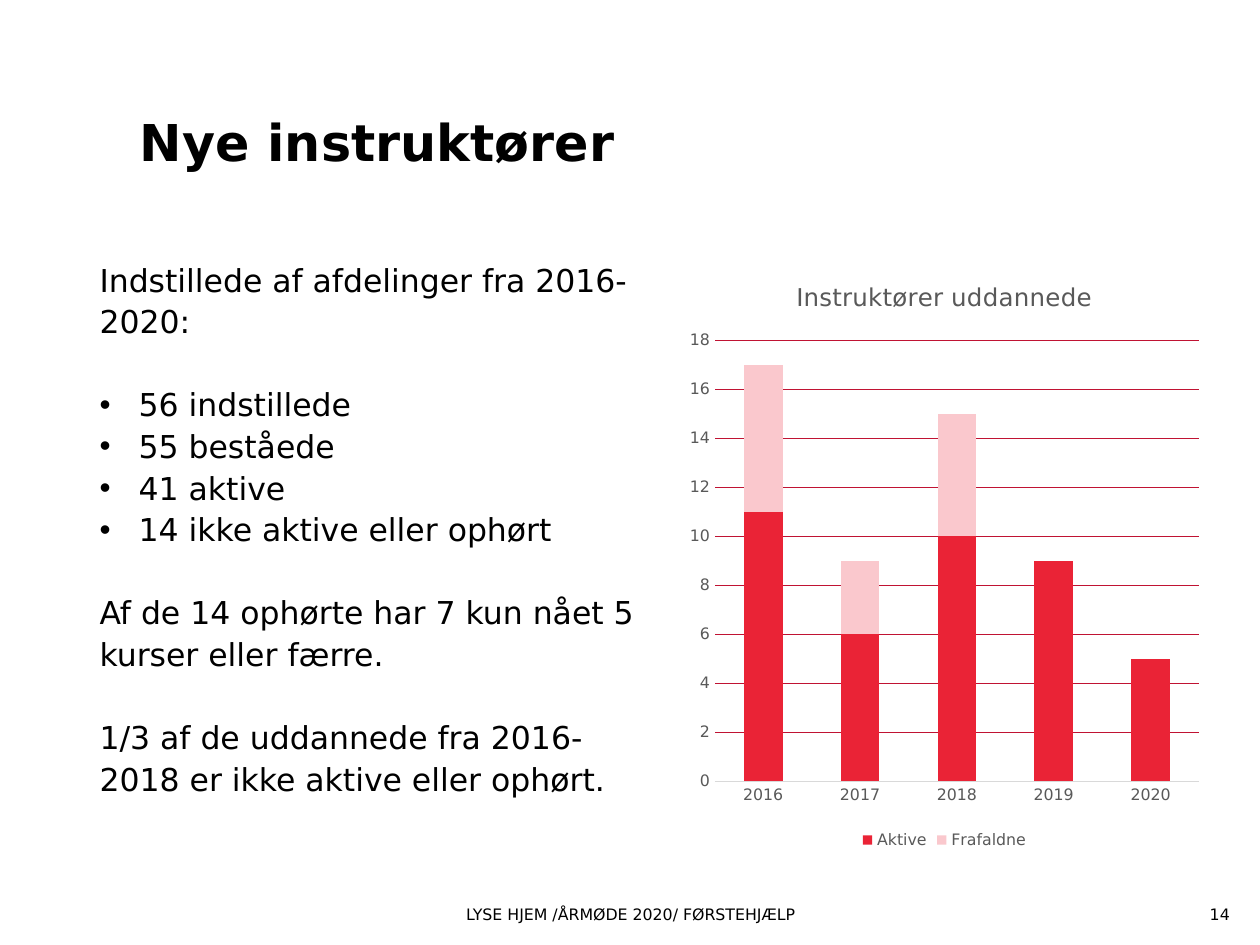
from pptx import Presentation
from pptx.chart.data import CategoryChartData
from pptx.dml.color import RGBColor
from pptx.enum.chart import XL_CHART_TYPE, XL_LEGEND_POSITION, XL_TICK_MARK
from pptx.enum.text import MSO_ANCHOR, PP_ALIGN
from pptx.oxml import parse_xml
from pptx.oxml.ns import nsdecls
from pptx.util import Inches, Pt

WIDTH, HEIGHT = 10, 7.5
BLACK, GREY, PALE_GREY = "000000", "595959", "D9D9D9"
RED, PINK, CRIMSON = "EA2336", "FAC8CD", "C01333"

# Shares of the slide's width and height
LEFT, COLUMN = 0.079, 0.441
CONTENT_TOP, CONTENT_HEIGHT = 0.272, 0.632
FOOTER_TOP, FOOTER_HEIGHT = 0.951, 0.033

YEARS = ["2016", "2017", "2018", "2019", "2020"]
INSTRUCTORS = {"Aktive": ([11, 6, 10, 9, 5], RED), "Frafaldne": ([6, 3, 5, 0, 0], PINK)}

# Blocks of text: (lines, bulleted)
BODY = [
    (["Indstillede af afdelinger fra 2016-2020:"], False),
    (["56 indstillede", "55 beståede", "41 aktive", "14 ikke aktive eller ophørt"], True),
    (["Af de 14 ophørte har 7 kun nået 5 kurser eller færre."], False),
    (["1/3 af de uddannede fra 2016-2018 er ikke aktive eller ophørt."], False),
]


def color(value):
    return RGBColor.from_string(value)


class Page:
    font_name = "DejaVu Sans"
    block_gap = 23.75

    def __init__(self, deck):
        self.slide = deck.slides.add_slide(deck.slide_layouts[6])

    def area(self, left, top, width, height):
        """Turn shares of the slide into lengths."""
        return (Inches(left * WIDTH), Inches(top * HEIGHT),
                Inches(width * WIDTH), Inches(height * HEIGHT))

    def style(self, font, size, fill=BLACK, bold=False):
        font.name, font.size, font.bold = self.font_name, Pt(size), bold
        font.color.rgb = color(fill)

    def frame(self, area, anchor=MSO_ANCHOR.TOP):
        frame = self.slide.shapes.add_textbox(*self.area(*area)).text_frame
        frame.word_wrap = True
        frame.vertical_anchor = anchor
        frame.margin_left = frame.margin_right = frame.margin_top = frame.margin_bottom = 0
        return frame

    def span(self, para, text, size, bold=False):
        span = para.add_run()
        span.text = text
        self.style(span.font, size, bold=bold)

    def label(self, area, text, size, align, anchor=MSO_ANCHOR.MIDDLE, bold=False, spacing=1.0):
        para = self.frame(area, anchor).paragraphs[0]
        para.alignment, para.line_spacing = align, spacing
        self.span(para, text, size, bold)

    def bullet(self, para):
        properties = para._p.get_or_add_pPr()
        indent = Inches(0.31)
        properties.set("marL", str(indent))
        properties.set("indent", str(-indent))
        properties.append(parse_xml(f'<a:buFont {nsdecls("a")} typeface="Arial"/>'))
        properties.append(parse_xml(f'<a:buChar {nsdecls("a")} char="•"/>'))

    def body(self, area, blocks, size):
        frame = self.frame(area)
        for block, (lines, bulleted) in enumerate(blocks):
            for row, line in enumerate(lines):
                first = block == row == 0
                para = frame.paragraphs[0] if first else frame.add_paragraph()
                if bulleted:
                    self.bullet(para)
                para.line_spacing = 1.1
                if block and row == 0:
                    para.space_before = Pt(self.block_gap)
                self.span(para, line, size)

    def stacked_columns(self, area, title, categories, series):
        data = CategoryChartData()
        data.categories = categories
        for name, (values, _) in series.items():
            data.add_series(name, values)
        chart = self.slide.shapes.add_chart(
            XL_CHART_TYPE.COLUMN_STACKED, *self.area(*area), data).chart
        self.style(chart.font, 10)

        chart.has_title = True
        heading = chart.chart_title.text_frame.paragraphs[0].add_run()
        heading.text = title
        self.style(heading.font, 14, GREY)
        chart.chart_title.include_in_layout = False

        chart.has_legend = True
        chart.legend.position = XL_LEGEND_POSITION.BOTTOM
        chart.legend.include_in_layout = False
        self.style(chart.legend.font, 9, GREY)

        plot = chart.plots[0]
        plot.gap_width, plot.overlap = 150, 100
        plot.vary_by_categories = False
        for bars, (_, fill) in zip(plot.series, series.values()):
            bars.format.fill.solid()
            bars.format.fill.fore_color.rgb = color(fill)

        for axis in (chart.category_axis, chart.value_axis):
            axis.major_tick_mark = axis.minor_tick_mark = XL_TICK_MARK.NONE
            self.style(axis.tick_labels.font, 9, GREY)
        self.line(chart.category_axis.format.line, PALE_GREY)
        scale = chart.value_axis
        scale.minimum_scale, scale.maximum_scale, scale.major_unit = 0, 18, 2
        scale.format.line.fill.background()
        scale.has_major_gridlines = True
        self.line(scale.major_gridlines.format.line, CRIMSON)

    def line(self, line, fill, width=0.75):
        line.color.rgb = color(fill)
        line.width = Pt(width)


def main():
    deck = Presentation()
    deck.slide_width, deck.slide_height = Inches(WIDTH), Inches(HEIGHT)
    page = Page(deck)
    page.label((LEFT, 0.125, COLUMN, 0.128), "Nye instruktører", 29, PP_ALIGN.CENTER,
               MSO_ANCHOR.TOP, bold=True, spacing=0.9)
    page.label((LEFT, FOOTER_TOP, 0.843, FOOTER_HEIGHT),
               "LYSE HJEM /ÅRMØDE 2020/ FØRSTEHJÆLP", 9, PP_ALIGN.CENTER)
    page.label((0.921, FOOTER_TOP, 0.055, FOOTER_HEIGHT), "14", 9, PP_ALIGN.RIGHT)
    page.stacked_columns((0.539, CONTENT_TOP, 0.421, CONTENT_HEIGHT),
                         "Instruktører uddannede", YEARS, INSTRUCTORS)
    page.body((LEFT, CONTENT_TOP, COLUMN, CONTENT_HEIGHT), BODY, 18)
    deck.save("out.pptx")


if __name__ == "__main__":
    main()
